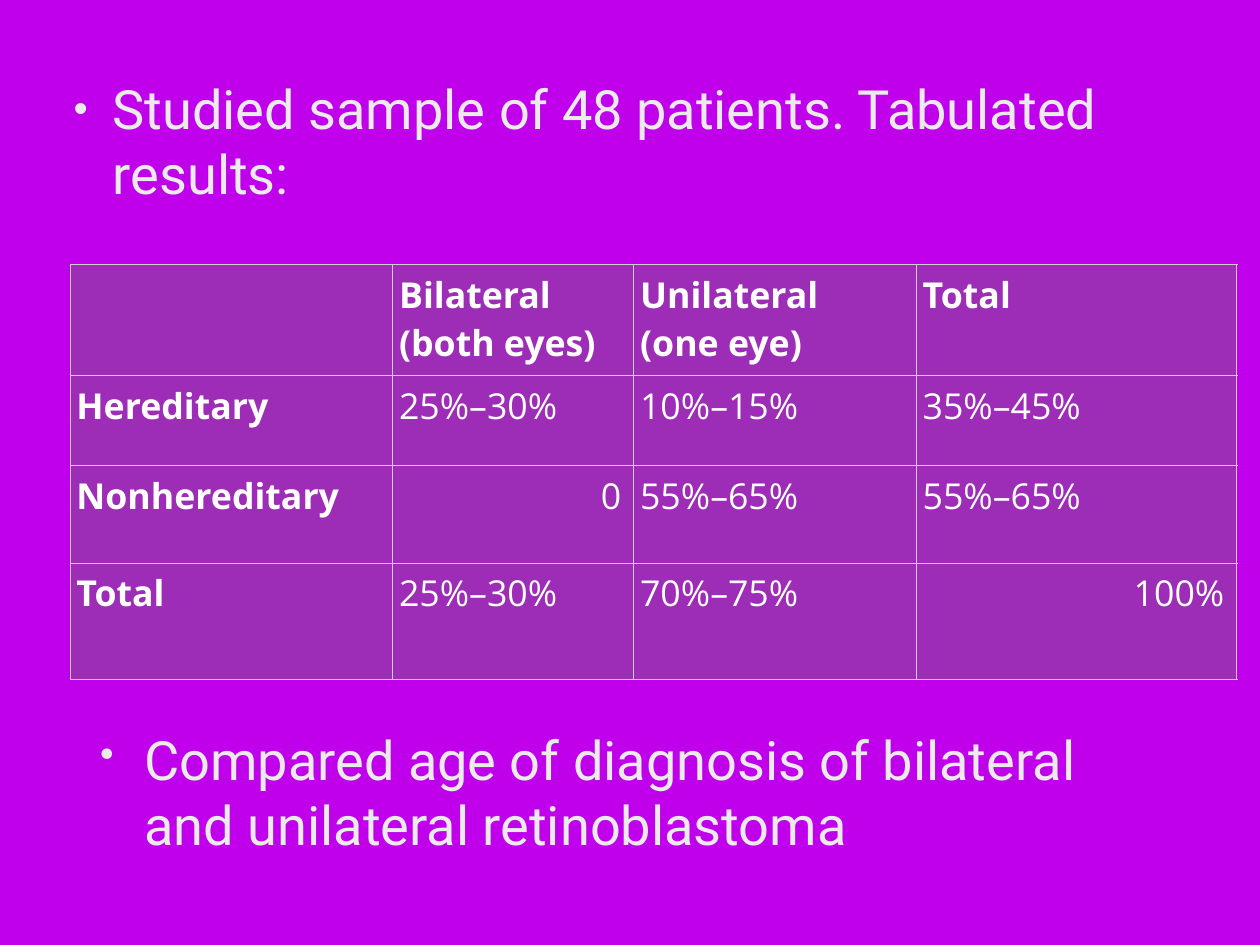
from pptx import Presentation
from pptx.dml.color import RGBColor as Rgb
from pptx.enum.text import MSO_ANCHOR as Anchor, MSO_AUTO_SIZE as Fit, PP_ALIGN as Align
from pptx.oxml import parse_xml
from pptx.oxml.ns import nsdecls
from pptx.util import Cm, Pt
from lxml.etree import SubElement as Sub
from pptx.oxml.ns import qn

COLORS = {"back": "C000EB", "text": "EBEBEB", "cell": "6D6D6D",
          "white": "FFFFFF", "rule": "CCCCCC"}
COLS = [9.25, 6.91, 8.1, 9.19]
ROWS = [3.18, 2.59, 2.79, 3.33]
DATA = [
    ["", "Bilateral\v(both eyes)", "Unilateral\v(one eye)", "Total"],
    ["Hereditary", "25%–30%", "10%–15%", "35%–45%"],
    ["Nonhereditary", "0", "55%–65%", "55%–65%"],
    ["Total", "25%–30%", "70%–75%", "100%"],
]


class Deck:
    def __init__(self, wide, high):
        self.show = Presentation()
        self.show.slide_width, self.show.slide_height = Cm(wide), Cm(high)
        self.slide = self.show.slides.add_slide(self.show.slide_layouts[1])
        title = self.slide.shapes.title
        title.element.getparent().remove(title.element)
        fill = self.slide.background.fill
        fill.solid()
        fill.fore_color.rgb = self.color("back")

    def color(self, name):
        return Rgb.from_string(COLORS[name])

    def style(self, para, font, size, color, bold=False):
        for run in para.runs:
            run.font.name, run.font.size, run.font.bold = font, Pt(size), bold
            run.font.color.rgb = self.color(color)

    def bullet(self, shape, text, indent, inset):
        frame = shape.text_frame
        frame.text = text
        frame.word_wrap = True
        frame.auto_size = Fit.NONE
        frame.vertical_anchor = Anchor.MIDDLE
        frame.margin_left = frame.margin_right = Cm(inset)
        frame.margin_top = frame.margin_bottom = Cm(inset)
        para = frame.paragraphs[0]
        para.space_before = Pt(0)
        props = para._p.get_or_add_pPr()
        props.set("marL", str(Cm(indent)))
        props.set("indent", str(-Cm(indent)))
        Sub(props, qn("a:buSzPct"), val="75000")
        Sub(props, qn("a:buChar"), char="•")
        self.style(para, "Roboto", 44, "text")

    def body(self, text, left, top, wide, high):
        shape = self.slide.placeholders[1]
        shape.left, shape.top = Cm(left), Cm(top)
        shape.width, shape.height = Cm(wide), Cm(high)
        self.bullet(shape, text, 1.12, 0)

    def box(self, text, *place):
        shape = self.slide.shapes.add_textbox(*map(Cm, place))
        self.bullet(shape, text, 1.27, 0.15)

    def cell(self, cell, text, bold, right):
        cell.text_frame.text = text
        cell.margin_left, cell.margin_right = Cm(0.18), Cm(0.36)
        cell.margin_top = cell.margin_bottom = Cm(0.15)
        para = cell.text_frame.paragraphs[0]
        para.alignment = Align.RIGHT if right else Align.LEFT
        self.style(para, "Open Sans", 29, "white", bold)
        cell.fill.solid()
        cell.fill.fore_color.rgb = self.color("cell")
        props = cell._tc.get_or_add_tcPr()
        Sub(props.find(".//" + qn("a:srgbClr")), qn("a:alpha"), val="41000")
        for spot, side in enumerate("LRTB"):
            props.insert(spot, parse_xml(
                f'<a:ln{side} {nsdecls("a")} w="12700"><a:solidFill>'
                f'<a:srgbClr val="{COLORS["rule"]}"/></a:solidFill></a:ln{side}>'))

    def table(self, data, left, top, cols, rows, rights):
        size = Cm(sum(cols)), Cm(sum(rows))
        grid = self.slide.shapes.add_table(
            len(rows), len(cols), Cm(left), Cm(top), *size).table
        grid.first_row = grid.horz_banding = False
        for col, wide in zip(grid.columns, cols):
            col.width = Cm(wide)
        for row, high in zip(grid.rows, rows):
            row.height = Cm(high)
        for r, line in enumerate(data):
            for c, text in enumerate(line):
                self.cell(grid.cell(r, c), text, r == 0 or c == 0, text in rights)


def main():
    deck = Deck(36.12, 27.1)
    deck.body("Studied sample of 48 patients. Tabulated results:",
              2.11, 1.63, 31.9, 4.8)
    deck.table(DATA, 2.01, 7.59, COLS, ROWS, ("0", "100%"))
    deck.box("Compared age of diagnosis of bilateral and unilateral retinoblastoma",
             2.72, 20.68, 30.66, 4.04)
    deck.show.save("out.pptx")


if __name__ == "__main__":
    main()
